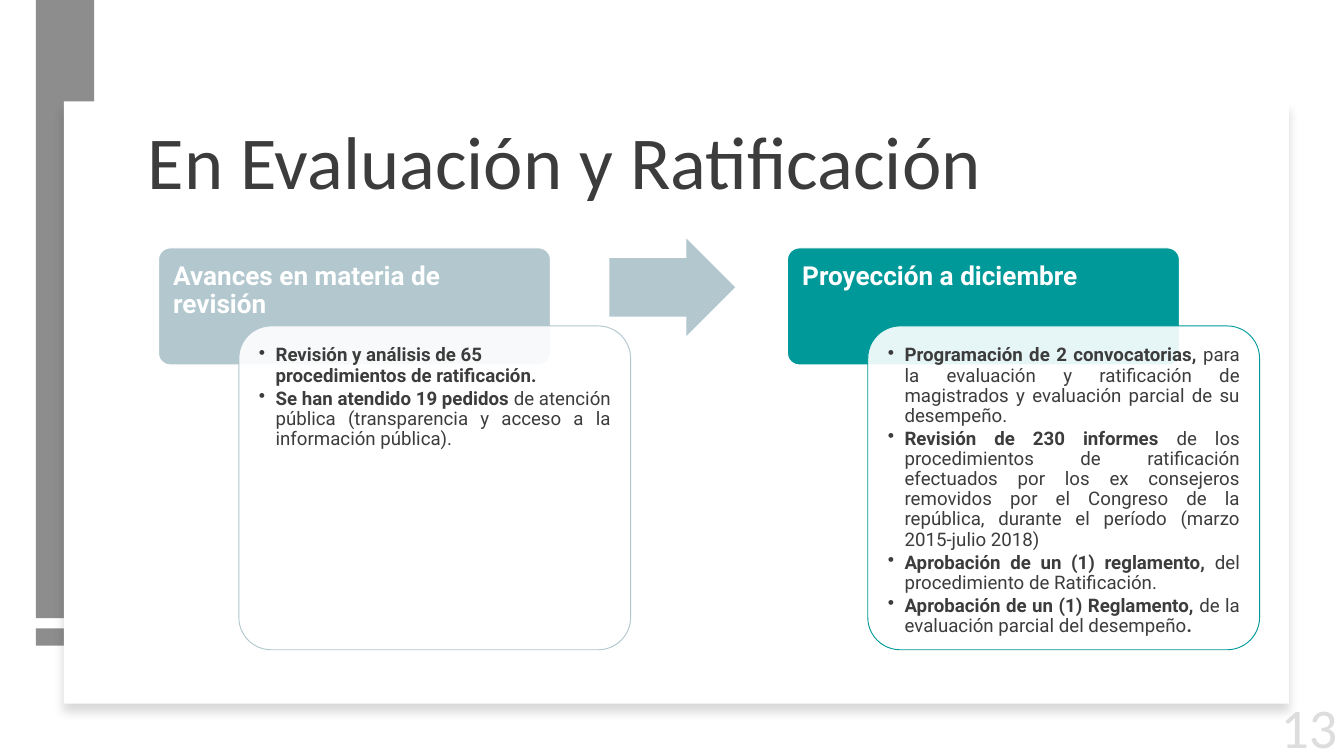
import pptx
import pptx.util
import pptx.dml.color
import pptx.enum.shapes
import pptx.enum.text
import pptx.oxml
import pptx.oxml.ns
import lxml.etree

Pt = pptx.util.Pt
SHAPES = pptx.enum.shapes.MSO_SHAPE
ALIGN = pptx.enum.text.PP_ALIGN
ANCHOR = pptx.enum.text.MSO_ANCHOR

colors = {
    "white": "FFFFFF",
    "gray": "8D8D8D",
    "text": "3C3C3C",
    "number": "DEDDDD",
    "mist": "B2C7CE",
    "teal": "009999",
}

presentation = pptx.Presentation()
presentation.slide_width = Pt(1440)
presentation.slide_height = Pt(810)
slide = presentation.slides.add_slide(presentation.slide_layouts[6])


def add_box(kind, left, top, width, height, fill, line=None):
    shape = slide.shapes.add_shape(kind, Pt(left), Pt(top), Pt(width), Pt(height))
    shape.shadow.inherit = False
    shape.fill.solid()
    shape.fill.fore_color.rgb = pptx.dml.color.RGBColor.from_string(colors[fill])
    if line:
        shape.line.color.rgb = pptx.dml.color.RGBColor.from_string(colors[line])
        shape.line.width = Pt(1)
    else:
        shape.line.fill.background()
    return shape


def add_text(area, paragraphs, font, size, color, insets=(7.2, 3.6, 7.2, 3.6),
             anchor=ANCHOR.TOP, bullets=False, spacing=0.9, after=0):
    frame = slide.shapes.add_textbox(*[Pt(value) for value in area]).text_frame
    frame.word_wrap = True
    frame.vertical_anchor = anchor
    frame.margin_left, frame.margin_top, frame.margin_right, frame.margin_bottom = [
        Pt(value) for value in insets]
    for index, (alignment, runs) in enumerate(paragraphs):
        paragraph = frame.paragraphs[0] if index == 0 else frame.add_paragraph()
        if bullets:
            properties = paragraph._p.get_or_add_pPr()
            properties.set("marL", str(Pt(18)))
            properties.set("indent", str(-Pt(18)))
            bullet = lxml.etree.SubElement(properties, pptx.oxml.ns.qn("a:buChar"))
            bullet.set("char", "•")
        paragraph.alignment = alignment
        paragraph.line_spacing = spacing
        paragraph.space_after = Pt(after)
        for text, bold in runs:
            run = paragraph.add_run()
            run.text = text
            run.font.name = font
            run.font.size = Pt(size)
            run.font.bold = bold
            run.font.color.rgb = pptx.dml.color.RGBColor.from_string(colors[color])


add_box(SHAPES.RECTANGLE, 38.4, 673.2, 62.6, 18.7, "gray")
add_box(SHAPES.RECTANGLE, 38.4, 0, 62.6, 662.4, "gray")
panel = add_box(SHAPES.RECTANGLE, 68.4, 108.7, 1312.6, 645.1, "white")
effects = panel._element.spPr.find(pptx.oxml.ns.qn("a:effectLst"))
effects.append(pptx.oxml.parse_xml(
    f'<a:outerShdw {pptx.oxml.ns.nsdecls("a")} blurRad="{Pt(11)}" dist="{Pt(10)}" '
    'dir="5400000" algn="t" rotWithShape="0"><a:srgbClr val="000000">'
    '<a:alpha val="15000"/></a:srgbClr></a:outerShdw>'))

add_text((151.2, 64.8, 1163.5, 159.1),
         [(ALIGN.LEFT, [("En Evaluación y Ratificación", False)])],
         "Calibri", 80, "text", anchor=ANCHOR.BOTTOM, after=6)
add_text((1226.9, 738, 213.1, 79.9), [(ALIGN.RIGHT, [("13", False)])],
         "Calibri", 60, "number", anchor=ANCHOR.BOTTOM, spacing=1)

columns = [
    (169.9, "mist", "Avances en materia de revisión", [
        (ALIGN.LEFT, [("Revisión y análisis de 65 procedimientos de ratificación.", True)]),
        (ALIGN.JUSTIFY, [
            ("Se han atendido 19 pedidos ", True),
            ("de atención pública (transparencia y acceso a la información pública).", False)]),
    ]),
    (843.8, "teal", "Proyección a diciembre", [
        (ALIGN.JUSTIFY, [
            ("Programación de 2 convocatorias, ", True),
            ("para la evaluación y ratificación de magistrados y evaluación parcial "
             "de su desempeño.", False)]),
        (ALIGN.JUSTIFY, [
            ("Revisión de 230 informes ", True),
            ("de los procedimientos de ratificación efectuados por los ex consejeros "
             "removidos por el Congreso de la república, durante el período "
             "(marzo 2015-julio 2018)", False)]),
        (ALIGN.JUSTIFY, [
            ("Aprobación de un (1) reglamento, ", True),
            ("del procedimiento de Ratificación. ", False)]),
        (ALIGN.JUSTIFY, [
            ("Aprobación de un (1) Reglamento, ", True),
            ("de la evaluación parcial del desempeño", False),
            (".", True)]),
    ]),
]

for left, color, heading, items in columns:
    header = add_box(SHAPES.ROUNDED_RECTANGLE, left, 265.7, 419.8, 125.3, color, "white")
    header.adjustments[0] = 0.1
    add_text((left, 265.7, 419.8, 83.5), [(ALIGN.LEFT, [(heading, True)])],
             "Roboto", 28, "white", (15.7, 15.7, 15.7, 8.4))
    card = add_box(SHAPES.ROUNDED_RECTANGLE, left + 86, 349.2, 419.8, 347, "white", color)
    card.adjustments[0] = 0.1
    fill_color = card._element.spPr.find(
        f'{pptx.oxml.ns.qn("a:solidFill")}/{pptx.oxml.ns.qn("a:srgbClr")}')
    lxml.etree.SubElement(fill_color, pptx.oxml.ns.qn("a:alpha")).set("val", "90000")
    add_text((left + 96.2, 359.3, 399.6, 326.9), items, "Roboto", 20, "text",
             (11.2, 11.2, 11.2, 11.2), bullets=True, after=3)

arrow = add_box(SHAPES.RIGHT_ARROW, 653, 255.6, 134.6, 104.4, "mist")
arrow.adjustments[0] = 0.6

presentation.save("out.pptx")
